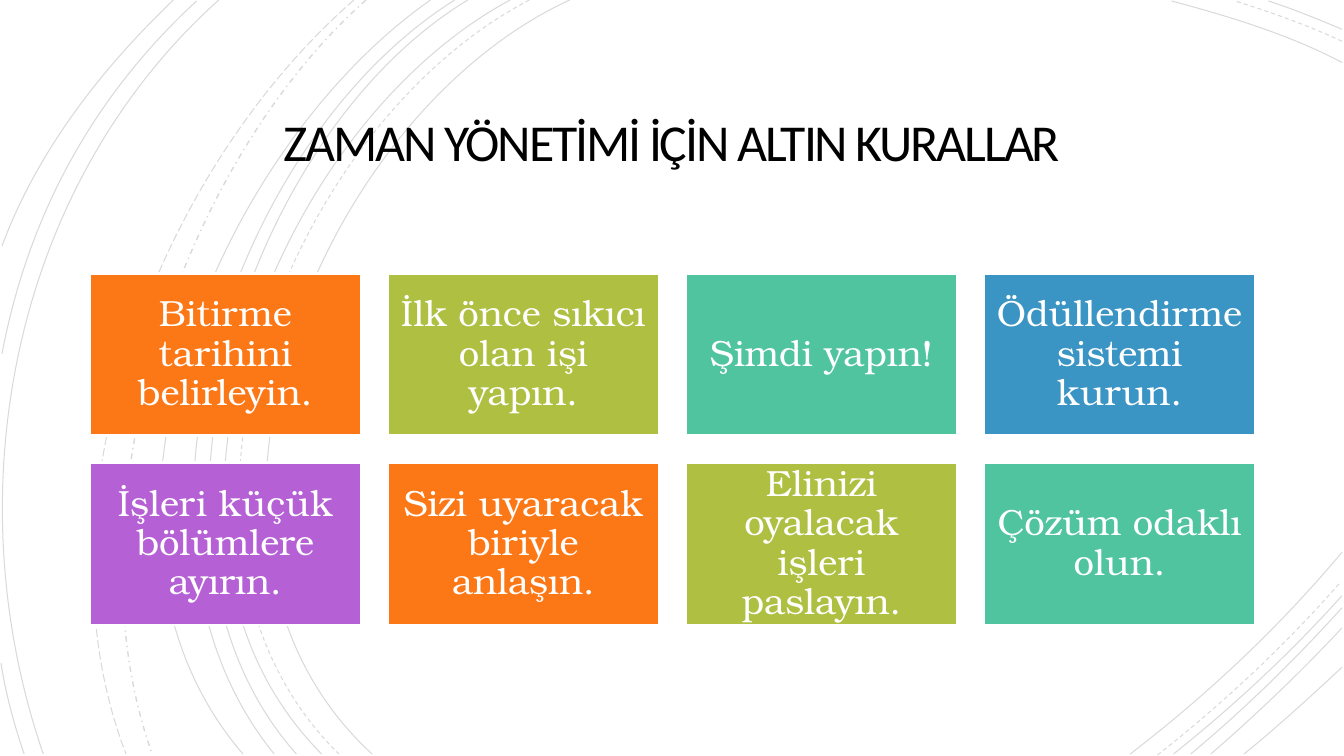
from lxml import etree
from pptx import Presentation
from pptx.dml.color import RGBColor
from pptx.enum.dml import MSO_LINE
from pptx.enum.shapes import MSO_SHAPE
from pptx.enum.text import MSO_ANCHOR, MSO_AUTO_SIZE, PP_ALIGN
from pptx.oxml.ns import qn
from pptx.util import Inches, Pt

RECTANGLE = MSO_SHAPE.RECTANGLE
MIDDLE = MSO_ANCHOR.MIDDLE
CENTER = PP_ALIGN.CENTER
NO_AUTOFIT = MSO_AUTO_SIZE.NONE
SOLID, DASH = MSO_LINE.SOLID, MSO_LINE.DASH
DASH_DOT, LONG_DASH = MSO_LINE.DASH_DOT, MSO_LINE.LONG_DASH
TITLE_ONLY = 5

COLORS = {
    "black": "000000",
    "white": "FFFFFF",
    "orange": "FC7715",
    "lime": "AFBF41",
    "teal": "50C49F",
    "blue": "3B95C4",
    "purple": "B560D4",
}

TITLE = "ZAMAN YÖNETİMİ İÇİN ALTIN KURALLAR"
TITLE_FONT = {"name": "Calibri", "size": Pt(37)}
TITLE_LETTER_SPACING = "-150"  # hundredths of a point
CARD_FONT = {"name": "TeX Gyre Bonum", "size": Pt(26)}

RULES = [
    "Bitirme tarihini belirleyin.",
    "İlk önce sıkıcı olan işi yapın.",
    "Şimdi yapın!",
    "Ödüllendirme sistemi kurun.",
    "İşleri küçük bölümlere ayırın.",
    "Sizi uyaracak biriyle anlaşın.",
    "Elinizi oyalacak işleri paslayın.",
    "Çözüm odaklı olun.",
]
CARD_FILLS = ["orange", "lime", "teal", "blue", "purple"]
COLUMNS = 4
CARD_WIDTH, CARD_HEIGHT = 2.69, 1.61
FIRST_LEFT, LAST_LEFT = 0.89, 9.76
FIRST_TOP, ROW_PITCH = 2.71, 1.88

ARC_OPACITY = "15000"  # thousandths of a percent
# Dash, line width, then start, two control points and end in inches
ARCS = [
    # Long arcs on the left
    (SOLID, 0.75, (5.65, 0), (3.15, 1.15), (1.43, 5.4), (3.69, 7.48)),
    (DASH, 0.75, (5.25, 0), (2.85, 1.25), (1.23, 5.37), (3.36, 7.48)),
    (SOLID, 0.75, (5.06, 0), (2.7, 1.27), (1.1, 5.37), (3.19, 7.48)),
    (SOLID, 0.75, (4.64, 0), (2.44, 1.33), (1.1, 5.41), (2.94, 7.48)),
    (SOLID, 0.75, (4.51, 0), (2.31, 1.38), (0.97, 5.33), (2.72, 7.48)),
    (SOLID, 0.75, (4.27, 0), (2.17, 1.47), (0.53, 5.29), (2.41, 7.48)),
    (DASH_DOT, 1, (3.63, 0), (1.76, 1.66), (0.65, 5.09), (1.51, 7.48)),
    (LONG_DASH, 0.75, (3.51, 0), (1.57, 1.69), (0.29, 4.99), (1.25, 7.48)),
    (SOLID, 0.75, (2.17, 0), (0.11, 1.85), (-0.46, 4.9), (0.43, 7.48)),
    (SOLID, 0.75, (1.95, 0.01), (0.92, 0.96), (0.28, 2.14), (0.02, 3.51)),
    (SOLID, 0.75, (0.01, 6.58), (0.06, 6.89), (0.14, 7.19), (0.24, 7.48)),
    (SOLID, 0.75, (1.72, 0), (1, 0.69), (0.37, 1.5), (0.02, 2.44)),
    # Top right corner
    (SOLID, 0.75, (13.31, 0.62), (12.78, 0.34), (12.18, 0.16), (11.62, 0.01)),
    (DASH, 0.75, (13.31, 0.41), (12.97, 0.25), (12.6, 0.12), (12.25, 0.01)),
    (SOLID, 0.75, (13.31, 0.29), (13.07, 0.19), (12.83, 0.09), (12.58, 0.01)),
    # Bottom right corner
    (SOLID, 0.75, (11.21, 7.48), (11.97, 6.9), (12.69, 6.22), (13.31, 5.48)),
    (DASH, 0.75, (11.48, 7.49), (12.13, 6.98), (12.75, 6.4), (13.3, 5.77)),
    (SOLID, 0.75, (11.64, 7.48), (12.23, 7.01), (12.8, 6.48), (13.31, 5.91)),
    (SOLID, 0.75, (11.81, 7.48), (12.34, 7.04), (12.84, 6.55), (13.31, 6.03)),
    (SOLID, 0.75, (12.01, 7.48), (12.46, 7.09), (12.9, 6.67), (13.31, 6.23)),
    (SOLID, 0.75, (12.34, 7.48), (12.67, 7.21), (12.99, 6.92), (13.31, 6.62)),
]


def color(name):
    return RGBColor.from_string(COLORS[name])


def place(shape, left, top, width, height):
    box = {"left": left, "top": top, "width": width, "height": height}
    for name, value in box.items():
        setattr(shape, name, Inches(value))


def write_text(shape, text, font, color_name, inset, line_spacing):
    """Fill a shape with one centred paragraph and return its run."""
    frame = shape.text_frame
    frame_format = {"word_wrap": True, "auto_size": NO_AUTOFIT, "vertical_anchor": MIDDLE}
    for side in ("left", "top", "right", "bottom"):
        frame_format[f"margin_{side}"] = Inches(inset)
    for name, value in frame_format.items():
        setattr(frame, name, value)
    paragraph = frame.paragraphs[0]
    paragraph.alignment = CENTER
    paragraph.line_spacing = line_spacing
    run = paragraph.add_run()
    run.text = text
    for name, value in font.items():
        setattr(run.font, name, value)
    run.font.color.rgb = color(color_name)
    return run


def add_arc(slide, dash, width, *points):
    start, *rest = [(Inches(x), Inches(y)) for x, y in points]
    builder = slide.shapes.build_freeform(*start)
    builder.add_line_segments(rest, close=False)
    shape = builder.convert_to_shape()
    shape.shadow.inherit = False
    shape.fill.background()
    line_format = {"width": Pt(width), "dash_style": dash}
    shape.line.color.rgb = color("black")
    for name, value in line_format.items():
        setattr(shape.line, name, value)

    # Turn the three straight segments into one cubic curve
    segments = list(shape._element.iter(qn("a:lnTo")))
    outline = segments[0].getparent()
    curve = etree.SubElement(outline, qn("a:cubicBezTo"))
    for segment in segments:
        curve.append(segment[0])
        outline.remove(segment)

    # Make the line faint
    line_color = next(shape._element.spPr.find(qn("a:ln")).iter(qn("a:srgbClr")))
    etree.SubElement(line_color, qn("a:alpha"), val=ARC_OPACITY)


def add_title(slide):
    title = slide.shapes.title
    place(title, 1.92, 0.87, 9.49, 1.15)
    run = write_text(title, TITLE, TITLE_FONT, "black", 0.25, 0.85)
    run._r.get_or_add_rPr().set("spc", TITLE_LETTER_SPACING)


def add_card(slide, index, text):
    row, column = divmod(index, COLUMNS)
    left = FIRST_LEFT + column * (LAST_LEFT - FIRST_LEFT) / (COLUMNS - 1)
    top = FIRST_TOP + row * ROW_PITCH
    box = [Inches(value) for value in (left, top, CARD_WIDTH, CARD_HEIGHT)]
    card = slide.shapes.add_shape(RECTANGLE, *box)
    card.shadow.inherit = False
    card.fill.solid()
    card.fill.fore_color.rgb = color(CARD_FILLS[index % len(CARD_FILLS)])
    card.line.color.rgb = color("white")
    card.line.width = Pt(2)
    write_text(card, text, CARD_FONT, "white", 0.11, 0.9)


def main():
    presentation = Presentation()
    presentation.slide_width = Inches(13.33)
    presentation.slide_height = Inches(7.5)
    slide = presentation.slides.add_slide(presentation.slide_layouts[TITLE_ONLY])
    slide.background.fill.solid()
    slide.background.fill.fore_color.rgb = color("white")

    # Background arcs
    for arc in ARCS:
        add_arc(slide, *arc)

    # Title and rule cards
    add_title(slide)
    for index, rule in enumerate(RULES):
        add_card(slide, index, rule)

    presentation.save("out.pptx")


if __name__ == "__main__":
    main()
